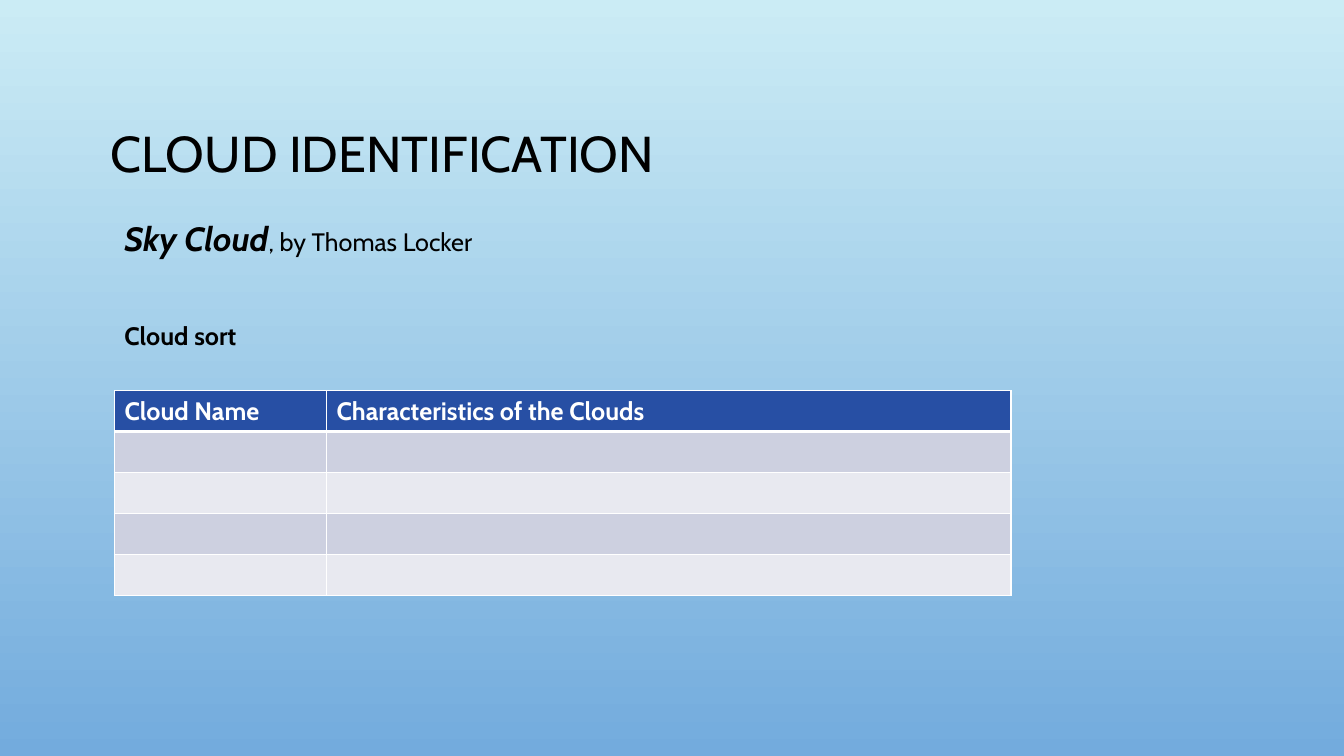
from dataclasses import dataclass

from lxml.etree import SubElement
from pptx import Presentation
from pptx.dml.color import RGBColor
from pptx.enum.text import MSO_ANCHOR as Anchor, MSO_AUTO_SIZE as AutoSize, PP_ALIGN as Align
from pptx.oxml.ns import qn
from pptx.util import Emu, Pt

EMU_PER_PX = 9525
FONT_NAME = "Cabin"
BLACK = RGBColor(0x00, 0x00, 0x00)
WHITE = RGBColor(0xFF, 0xFF, 0xFF)
SKY_TOP = RGBColor(0xCB, 0xEC, 0xF5)
SKY_BOTTOM = RGBColor(0x73, 0xAB, 0xDD)
HEADER_BLUE = RGBColor(0x27, 0x4F, 0xA4)
BAND_DARK = RGBColor(0xCD, 0xD0, 0xE0)
BAND_LIGHT = RGBColor(0xE8, 0xE9, 0xF0)

HEADINGS = ("Cloud Name", "Characteristics of the Clouds")
COLUMN_WIDTHS = (202, 652)
ROW_HEIGHT = 39
ROW_COUNT = 5


@dataclass(frozen=True)
class Area:
    left: int
    top: int
    width: int
    height: int

    def emu(self) -> tuple[Emu, ...]:
        return tuple(map(px, (self.left, self.top, self.width, self.height)))


@dataclass(frozen=True)
class Span:
    text: str
    size: int = 18
    bold: bool = False
    italic: bool = False
    color: RGBColor = BLACK


TITLE_AREA = Area(96, 65, 1088, 168)
BOOK_AREA = Area(109, 203, 867, 194)
TABLE_AREA = Area(109, 372, sum(COLUMN_WIDTHS), ROW_HEIGHT * ROW_COUNT)


def px(length: int) -> Emu:
    return Emu(length * EMU_PER_PX)


def add_spans(para, *spans: Span) -> None:
    for span in spans:
        run = para.add_run()
        run.text = span.text
        run.font.color.rgb = span.color
        formats = {"name": FONT_NAME, "size": Pt(span.size),
                   "bold": span.bold, "italic": span.italic}
        for name, value in formats.items():
            setattr(run.font, name, value)


def paint_sky(page) -> None:
    fill = page.background.fill
    fill.gradient()
    fill.gradient_angle = 270
    for stop, position, color in zip(fill.gradient_stops, (0, 1), (SKY_TOP, SKY_BOTTOM)):
        stop.position = position
        stop.color.rgb = color


def write_title(page) -> None:
    title = page.shapes.title
    title.left, title.top, title.width, title.height = TITLE_AREA.emu()
    frame = title.text_frame
    formats = {"vertical_anchor": Anchor.MIDDLE, "word_wrap": True, "auto_size": AutoSize.NONE}
    for name, value in formats.items():
        setattr(frame, name, value)
    para = frame.paragraphs[0]
    para.alignment = Align.LEFT
    para.line_spacing = 0.9
    add_spans(para, Span("CLOUD IDENTIFICATION", 36))


def write_book(page) -> None:
    frame = page.shapes.add_textbox(*BOOK_AREA.emu()).text_frame
    frame.word_wrap = True
    add_spans(frame.paragraphs[0], Span("Sky Cloud", 24, bold=True, italic=True),
              Span(", by Thomas Locker"))
    para = frame.add_paragraph()
    para.space_before = Pt(44)
    add_spans(para, Span("Cloud sort", bold=True))


def set_borders(cell, widths: dict[str, int]) -> None:
    """Draw white lines on the cell's sides, with widths in points."""
    properties = cell._tc.get_or_add_tcPr()
    for side, width in widths.items():
        line = SubElement(properties, qn(f"a:ln{side}"), w=str(Pt(width)))
        fill = SubElement(line, qn("a:solidFill"))
        SubElement(fill, qn("a:srgbClr"), val=str(WHITE))


def add_cloud_table(page) -> None:
    table = page.shapes.add_table(ROW_COUNT, len(HEADINGS), *TABLE_AREA.emu()).table
    for column, width in zip(table.columns, COLUMN_WIDTHS):
        column.width = px(width)
    for index, row in enumerate(table.rows):
        row.height = px(ROW_HEIGHT)
        band = BAND_DARK if index % 2 else BAND_LIGHT
        for cell in row.cells:
            set_borders(cell, {"L": 1, "R": 1, "T": 3 if index == 1 else 1,
                               "B": 3 if index == 0 else 1})
            cell.fill.solid()
            cell.fill.fore_color.rgb = band if index else HEADER_BLUE
    for cell, heading in zip(table.rows[0].cells, HEADINGS):
        add_spans(cell.text_frame.paragraphs[0], Span(heading, bold=True, color=WHITE))


def main() -> None:
    deck = Presentation()
    deck.slide_width, deck.slide_height = px(1280), px(720)
    page = deck.slides.add_slide(deck.slide_layouts.get_by_name("Title Only"))
    paint_sky(page)
    write_title(page)
    write_book(page)
    add_cloud_table(page)
    deck.save("out.pptx")


if __name__ == "__main__":
    main()
